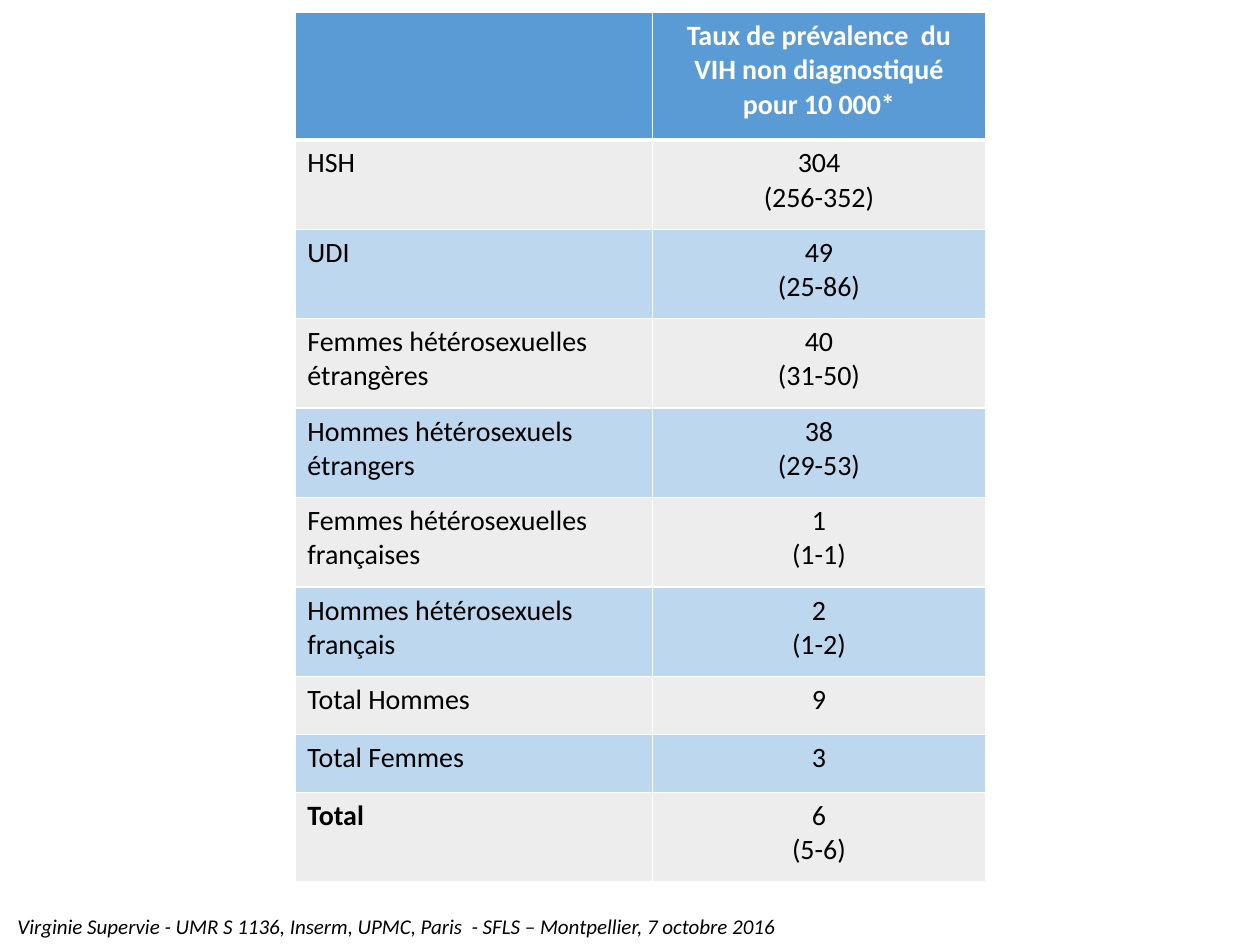
import pptx
import pptx.util
import pptx.dml.color
import pptx.enum.text
import pptx.oxml
import pptx.oxml.ns
import lxml.etree

# Content: group, then the lines of its rate cell
HEADER = ("", ["Taux de prévalence  du VIH non diagnostiqué pour 10 000*"])
GROUPS = [
    ("HSH", ["304", "(256-352)"]),
    ("UDI", ["49", "(25-86)"]),
    ("Femmes hétérosexuelles étrangères", ["40", "(31-50)"]),
    ("Hommes hétérosexuels étrangers", ["38", "(29-53)"]),
    ("Femmes hétérosexuelles françaises", ["1", "(1-1)"]),
    ("Hommes hétérosexuels français", ["2", "(1-2)"]),
    ("Total Hommes", ["9"]),
    ("Total Femmes", ["3"]),
    ("Total", ["6", "(5-6)"]),
]
FOOTER = "Virginie Supervie - UMR S 1136, Inserm, UPMC, Paris  - SFLS – Montpellier, 7 octobre 2016"

# Style and layout
COLORS = {"header": "5B9BD5", "odd": "EDEDED", "even": "BDD7EE",
          "white": "FFFFFF", "black": "000000"}
FONT = "Calibri"
WIDTH, HEIGHT = 10, 7.5
TABLE_LEFT, TABLE_TOP = 2.34, 0.1
COLUMN_WIDTHS = [2.84, 2.64]
HEADER_HEIGHT = 1.01
HEIGHT_BY_LINES = {1: 0.46, 2: 0.71}
FOOTER_HEIGHT = 0.3
FOOTER_LEFT = 0.04

Inches = pptx.util.Inches
ALIGN = pptx.enum.text.PP_ALIGN


def rgb(name):
    return pptx.dml.color.RGBColor.from_string(COLORS[name])


def write_lines(frame, lines, size, color, align, bold=False, italic=False):
    for index, line in enumerate(lines):
        paragraph = frame.paragraphs[0] if index == 0 else frame.add_paragraph()
        paragraph.alignment = align
        if not line:
            paragraph.font.size = pptx.util.Pt(size)
            continue
        run = paragraph.add_run()
        run.text = line
        run.font.name = FONT
        run.font.size = pptx.util.Pt(size)
        run.font.bold = bold
        run.font.italic = italic
        run.font.color.rgb = rgb(color)


def set_borders(cell, widths):
    """Put white lines, which must precede the fill, round a cell."""
    properties = cell._tc.get_or_add_tcPr()
    for position, (side, width) in enumerate(widths.items()):
        line = lxml.etree.Element(pptx.oxml.ns.qn("a:ln" + side),
                                  w=str(pptx.util.Pt(width)))
        fill = lxml.etree.SubElement(line, pptx.oxml.ns.qn("a:solidFill"))
        lxml.etree.SubElement(fill, pptx.oxml.ns.qn("a:srgbClr"), val=COLORS["white"])
        properties.insert(position, line)


presentation = pptx.Presentation()
presentation.slide_width = Inches(WIDTH)
presentation.slide_height = Inches(HEIGHT)
slide = presentation.slides.add_slide(presentation.slide_layouts[6])

# Prevalence table
rows = [HEADER] + GROUPS
row_heights = [HEADER_HEIGHT] + [HEIGHT_BY_LINES[len(rates)] for _, rates in GROUPS]
table = slide.shapes.add_table(
    len(rows), len(COLUMN_WIDTHS), Inches(TABLE_LEFT), Inches(TABLE_TOP),
    Inches(sum(COLUMN_WIDTHS)), Inches(sum(row_heights))).table
for column, width in zip(table.columns, COLUMN_WIDTHS):
    column.width = Inches(width)

for row_index, (group, rates) in enumerate(rows):
    table.rows[row_index].height = Inches(row_heights[row_index])
    is_header = row_index == 0
    band = "header" if is_header else ("odd" if row_index % 2 else "even")
    borders = {"L": 1, "R": 1, "T": 3 if row_index == 1 else 1, "B": 3 if is_header else 1}
    for column_index, lines in enumerate([[group], rates]):
        cell = table.cell(row_index, column_index)
        cell.fill.solid()
        cell.fill.fore_color.rgb = rgb(band)
        set_borders(cell, borders)
        is_total = group == "Total" and column_index == 0
        write_lines(cell.text_frame, lines, 16,
                    "white" if is_header else "black",
                    ALIGN.CENTER if column_index else ALIGN.LEFT,
                    bold=is_header or is_total)

# Source line along the bottom edge
footer = slide.shapes.add_textbox(
    Inches(FOOTER_LEFT), Inches(HEIGHT - FOOTER_HEIGHT),
    Inches(WIDTH - FOOTER_LEFT), Inches(FOOTER_HEIGHT))
footer.text_frame.word_wrap = True
footer.text_frame.auto_size = pptx.enum.text.MSO_AUTO_SIZE.SHAPE_TO_FIT_TEXT
write_lines(footer.text_frame, [FOOTER], 12, "black", ALIGN.LEFT, italic=True)

presentation.save("out.pptx")
